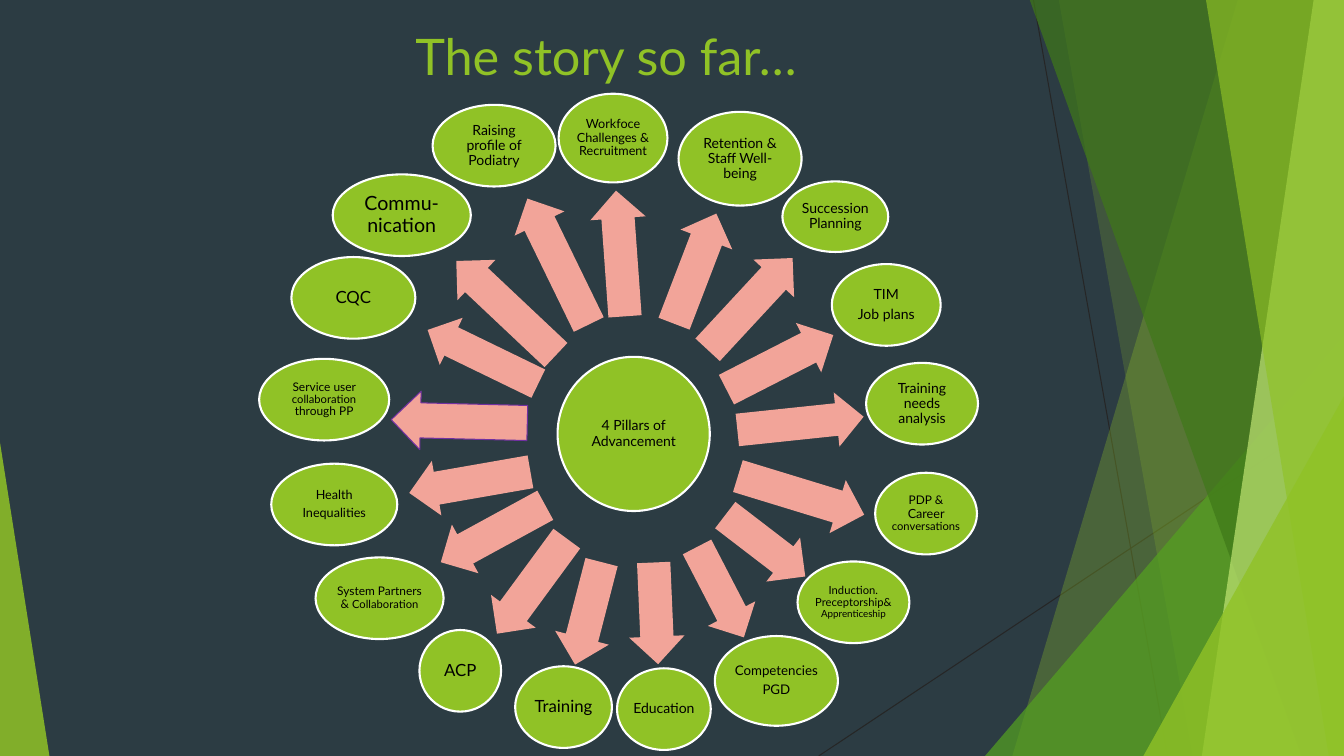
from dataclasses import dataclass

from pptx import Presentation
from pptx import util as u
from pptx.dml.color import RGBColor
from pptx.enum import shapes, text
from pptx.oxml.ns import qn
from lxml import etree

NIGHT = RGBColor(0x2C, 0x3C, 0x43)
LIME = RGBColor(0x90, 0xC2, 0x26)
GRASS = RGBColor(0x54, 0xA0, 0x21)
FOREST = RGBColor(0x3F, 0x78, 0x19)
PALE_LIME = RGBColor(0xC0, 0xE4, 0x74)
SALMON = RGBColor(0xF2, 0xA4, 0x99)
PURPLE = RGBColor(0x70, 0x30, 0xA0)
CHARCOAL = RGBColor(0x26, 0x26, 0x26)
WHITE = RGBColor(0xFF, 0xFF, 0xFF)
BLACK = RGBColor(0, 0, 0)
FONT = "Lato"
WIDTH, HEIGHT, BLEED = 13.33, 7.5, -0.01


@dataclass(frozen=True)
class Frame:
    left: float
    top: float
    width: float
    height: float

    def lengths(self) -> list:
        return [u.Inches(v) for v in (self.left, self.top, self.width, self.height)]


@dataclass(frozen=True)
class Span:
    text: str
    size: float


@dataclass(frozen=True)
class Bubble:
    frame: Frame
    paragraphs: list[list[Span]]
    inset: float = 0.01


@dataclass(frozen=True)
class Arrow:
    frame: Frame
    angle: float
    outline: RGBColor | None = None


@dataclass(frozen=True)
class Blade:
    top_left: float
    bottom_left: float
    color: RGBColor
    opacity: int


@dataclass(frozen=True)
class Wedge:
    frame: Frame
    apex: float
    color: RGBColor
    opacity: int


def plain(size: float, *lines: str) -> list[list[Span]]:
    return [[Span(line, size)] for line in lines]


def mixed(*pieces: tuple[str, float]) -> list[list[Span]]:
    return [[Span(*piece) for piece in pieces]]


RAYS = [(10.25, 0, 11.58, HEIGHT), (WIDTH, 4.03, 8.12, HEIGHT)]
FACETS = [
    Blade(12.28, 10.04, LIME, 30),
    Blade(10.5, 11.83, LIME, 20),
    Wedge(Frame(9.77, 3.33, 3.56, 4.17), 1, GRASS, 72),
    Blade(10.21, 12.91, FOREST, 70),
    Blade(13.03, 11.92, PALE_LIME, 70),
    Blade(11.96, 13.18, LIME, 65),
    Wedge(Frame(11.34, 3.93, 1.99, 3.57), 1, LIME, 80),
    Wedge(Frame(0, 4.39, 0.49, 3.11), 0, LIME, 85),
]
HUB = Bubble(Frame(5.53, 3.54, 1.51, 1.53), plain(10, "4 Pillars of Advancement"))
SPOKES = [
    (Arrow(Frame(5.53, 2.24, 1.25, 0.55), 265.9),
     Bubble(Frame(5.54, 0.93, 1.08, 0.88), plain(9, "Workfoce Challenges & Recruitment"))),
    (Arrow(Frame(6.31, 2.39, 1.17, 0.55), 291),
     Bubble(Frame(6.73, 1.11, 1.22, 0.93), plain(10, "Retention & Staff Well-being"))),
    (Arrow(Frame(6.82, 2.74, 1.24, 0.55), 312.8),
     Bubble(Frame(7.76, 1.8, 1.05, 0.7), plain(10, "Succession Planning"))),
    (Arrow(Frame(7.14, 3.32, 1.19, 0.55), 332.9),
     Bubble(Frame(8.25, 2.62, 1.08, 0.81), plain(10, "TIM", "Job plans"))),
    (Arrow(Frame(7.31, 3.93, 1.26, 0.54), 354),
     Bubble(Frame(8.59, 3.6, 1.11, 0.81), plain(10, "Training needs analysis"))),
    (Arrow(Frame(7.29, 4.64, 1.31, 0.55), 17),
     Bubble(Frame(8.68, 4.69, 1.01, 0.81),
            mixed(("PDP & ", 8.5), ("Career ", 9), ("conversations", 8)))),
    (Arrow(Frame(7.09, 5.14, 1, 0.55), 37.5),
     Bubble(Frame(7.91, 5.57, 1.11, 0.81),
            mixed(("Induction. Preceptorship& ", 8), ("Apprenticeship", 7)))),
    (Arrow(Frame(6.64, 5.61, 1.01, 0.53), 62.6),
     Bubble(Frame(7.09, 6.31, 1.22, 0.89), plain(9.5, "Competencies", "PGD"))),
    (Arrow(Frame(6, 5.81, 1.01, 0.55), 87.5),
     Bubble(Frame(6.12, 6.63, 0.93, 0.81), plain(10, "Education"))),
    (Arrow(Frame(5.31, 5.81, 1.05, 0.55), 104.5),
     Bubble(Frame(5.11, 6.61, 0.96, 0.81), plain(12, "Training"), 0.02)),
    (Arrow(Frame(4.69, 5.54, 1.17, 0.55), 126.3),
     Bubble(Frame(4.16, 6.25, 0.81, 0.81), plain(12, "ACP"), 0.02)),
    (Arrow(Frame(4.3, 5.02, 1.18, 0.55), 151.4),
     Bubble(Frame(3.13, 5.53, 1.27, 0.81),
            mixed(("System Partners & ", 8.5), ("Collaboration", 8)))),
    (Arrow(Frame(4.05, 4.51, 1.22, 0.55), 170.1),
     Bubble(Frame(2.69, 4.6, 1.25, 0.81), plain(9, "Health", "Inequalities"))),
    (Arrow(Frame(3.88, 3.89, 1.35, 0.58), 181.4, PURPLE),
     Bubble(Frame(2.57, 3.56, 1.29, 0.81),
            mixed(("Service user ", 8.5), ("collaboration ", 8), ("through PP", 8.5)))),
    (Arrow(Frame(4.18, 3.28, 1.22, 0.52), 205.9),
     Bubble(Frame(2.89, 2.55, 1.23, 0.81), plain(12, "CQC"), 0.02)),
    (Arrow(Frame(4.34, 2.78, 1.36, 0.55), 223.3),
     Bubble(Frame(3.3, 1.73, 1.37, 0.81), plain(14, "Commu- nication"), 0.02)),
    (Arrow(Frame(4.84, 2.32, 1.39, 0.55), 244),
     Bubble(Frame(4.29, 1.04, 1.22, 0.81), plain(10, "Raising profile of Podiatry"))),
]


def paint(shape, fill: RGBColor, line: RGBColor | None = None,
          weight: float = 0.75, opacity: int = 100) -> None:
    shape.shadow.inherit = False
    shape.fill.solid()
    shape.fill.fore_color.rgb = fill
    if opacity < 100:
        color = shape._element.spPr.find(qn("a:solidFill"))[0]
        etree.SubElement(color, qn("a:alpha"), val=str(opacity * 1000))
    if line is None:
        shape.line.fill.background()
    else:
        shape.line.color.rgb = line
        shape.line.width = u.Pt(weight)


def style(span, size: float, color: RGBColor) -> None:
    span.font.name = FONT
    span.font.size = u.Pt(size)
    span.font.color.rgb = color


def draw_ray(page, ends: tuple[float, ...]) -> None:
    ray = page.shapes.add_connector(
        shapes.MSO_CONNECTOR.STRAIGHT, *[u.Inches(v) for v in ends])
    ray.line.color.rgb = CHARCOAL
    ray.line.width = u.Pt(0.75)
    etree.SubElement(ray._element.spPr, qn("a:effectLst"))


def draw_facet(page, facet: Blade | Wedge) -> None:
    if isinstance(facet, Wedge):
        shape = page.shapes.add_shape(
            shapes.MSO_SHAPE.ISOSCELES_TRIANGLE, *facet.frame.lengths())
        shape.adjustments[0] = facet.apex
    else:
        corners = [(WIDTH, BLEED), (WIDTH, HEIGHT), (facet.bottom_left, HEIGHT)]
        outline = page.shapes.build_freeform(u.Inches(facet.top_left), u.Inches(BLEED))
        outline.add_line_segments([(u.Inches(x), u.Inches(y)) for x, y in corners])
        shape = outline.convert_to_shape()
    paint(shape, facet.color, opacity=facet.opacity)


def draw_arrow(page, arrow: Arrow) -> None:
    shape = page.shapes.add_shape(shapes.MSO_SHAPE.RIGHT_ARROW, *arrow.frame.lengths())
    shape.adjustments[0], shape.adjustments[1] = 0.6, 0.5
    shape.rotation = arrow.angle
    paint(shape, SALMON, arrow.outline)


def draw_bubble(page, bubble: Bubble) -> None:
    shape = page.shapes.add_shape(shapes.MSO_SHAPE.OVAL, *bubble.frame.lengths())
    paint(shape, LIME, WHITE, 1.5)
    box = shape.text_frame
    box.word_wrap = True
    box.vertical_anchor = text.MSO_ANCHOR.MIDDLE
    box.margin_left = box.margin_right = u.Inches(bubble.inset)
    box.margin_top = box.margin_bottom = u.Inches(bubble.inset)
    for index, pieces in enumerate(bubble.paragraphs):
        para = box.add_paragraph() if index else box.paragraphs[0]
        para.alignment = text.PP_ALIGN.CENTER
        para.line_spacing = 0.9
        para.space_after = u.Pt(round(0.35 * pieces[0].size, 1))
        for piece in pieces:
            span = para.add_run()
            span.text = piece.text
            style(span, piece.size, BLACK)


def draw_title(page) -> None:
    title = page.shapes.title
    title.left, title.top, title.width, title.height = Frame(0.74, 0.2, 9.4, 1.24).lengths()
    box = title.text_frame
    box.text = "The story so far…"
    box.vertical_anchor = text.MSO_ANCHOR.TOP
    box.margin_left = u.Inches(1.24)
    para = box.paragraphs[0]
    para.alignment = text.PP_ALIGN.CENTER
    style(para.runs[0], 36, LIME)


def main() -> None:
    deck = Presentation()
    deck.slide_width, deck.slide_height = u.Inches(WIDTH), u.Inches(HEIGHT)
    page = deck.slides.add_slide(deck.slide_layouts[5])
    page.background.fill.solid()
    page.background.fill.fore_color.rgb = NIGHT
    for ends in RAYS:
        draw_ray(page, ends)
    for facet in FACETS:
        draw_facet(page, facet)
    draw_title(page)
    draw_bubble(page, HUB)
    for arrow, bubble in SPOKES:
        draw_arrow(page, arrow)
        draw_bubble(page, bubble)
    deck.save("out.pptx")


if __name__ == "__main__":
    main()
